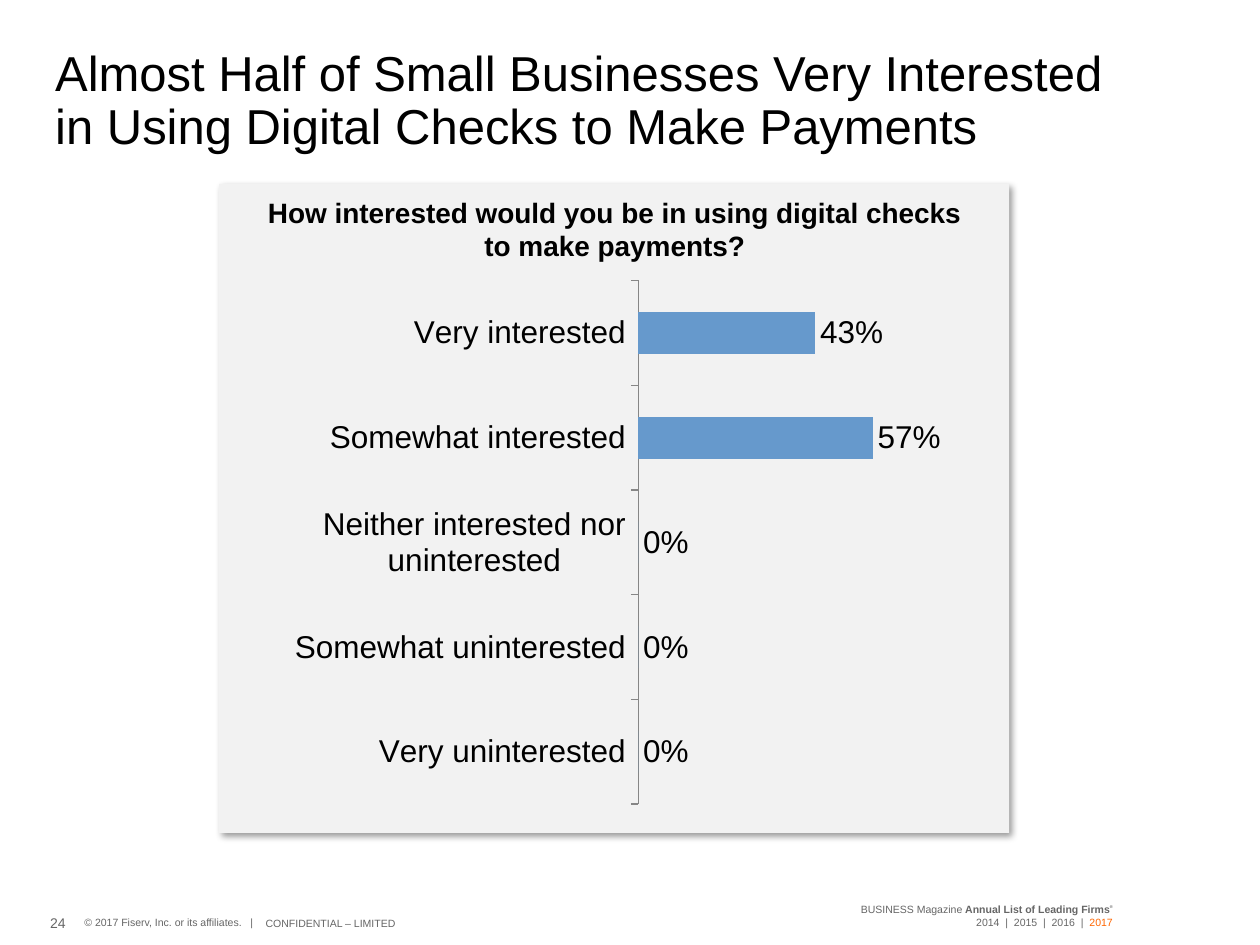
"""Build the slide on small business interest in digital checks."""
from lxml import etree
from pptx import Presentation
from pptx.chart.data import CategoryChartData
from pptx.dml.color import RGBColor
from pptx.enum.chart import XL_CHART_TYPE, XL_LABEL_POSITION, XL_TICK_MARK
from pptx.enum.shapes import MSO_SHAPE
from pptx.enum.text import MSO_ANCHOR, PP_ALIGN
from pptx.oxml import parse_xml
from pptx.oxml.ns import nsdecls, qn
from pptx.util import Inches, Pt

BAR = XL_CHART_TYPE.BAR_CLUSTERED
OUTSIDE_END = XL_LABEL_POSITION.OUTSIDE_END
TICK_OUT, TICK_NONE = XL_TICK_MARK.OUTSIDE, XL_TICK_MARK.NONE
RECTANGLE = MSO_SHAPE.RECTANGLE
TOP, MIDDLE, BOTTOM = MSO_ANCHOR.TOP, MSO_ANCHOR.MIDDLE, MSO_ANCHOR.BOTTOM
LEFT, CENTER, RIGHT = PP_ALIGN.LEFT, PP_ALIGN.CENTER, PP_ALIGN.RIGHT

BLACK = RGBColor(0x00, 0x00, 0x00)
GRAY = RGBColor(0x66, 0x66, 0x66)
AXIS_GRAY = RGBColor(0x86, 0x86, 0x86)
PANEL_GRAY = RGBColor(0xF2, 0xF2, 0xF2)
ORANGE = RGBColor(0xFF, 0x66, 0x00)
BLUE = RGBColor(0x66, 0x99, 0xCC)
FONT = "Arial"

deck = Presentation()
deck.slide_width, deck.slide_height = Inches(10), Inches(7.5)
COLUMN, ROW = deck.slide_width / 100, deck.slide_height / 100
page = deck.slides.add_slide(deck.slide_layouts[6])


def place(left, top, width, height):
    """Turn percentages of the slide into lengths."""
    return [int(n * unit) for n, unit in
            zip((left, top, width, height), (COLUMN, ROW, COLUMN, ROW))]


def add_text(spans, area, size=6, color=GRAY, bold=False, align=LEFT,
             anchor=TOP, spacing=1.0, insets=(0.1, 0.05)):
    """Add a text box; a span is a string or a (string, format) pair."""
    box = page.shapes.add_textbox(*place(*area))
    frame = box.text_frame
    frame.word_wrap = True
    frame.vertical_anchor = anchor
    frame.margin_left = frame.margin_right = Inches(insets[0])
    frame.margin_top = frame.margin_bottom = Inches(insets[1])
    para = frame.paragraphs[0]
    para.alignment, para.line_spacing = align, spacing
    for item in spans:
        if item == "\n":
            para.add_line_break()
            continue
        text, style = (item, {}) if isinstance(item, str) else item
        span = para.add_run()
        span.text = text
        span.font.name = FONT
        span.font.size = Pt(style.get("size", size))
        span.font.bold = style.get("bold", bold)
        span.font.color.rgb = style.get("color", color)
        if "baseline" in style:
            span.font._element.set("baseline", str(style["baseline"]))


add_text(["© 2017 Fiserv, Inc. or its affiliates.   |"], (6, 96.67, 16.7, 2.13),
         spacing=0.9, insets=(0.07, 0.03))
add_text(["CONFIDENTIAL – LIMITED"], (20.1, 96.4, 15.2, 2.67))
add_text(["BUSINESS Magazine ",
          ("Annual List of Leading Firms", {"bold": True}),
          ("®", {"bold": True, "size": 4, "baseline": 60000}),
          "\n", "2014  |  2015  |  2016  |  ", ("2017", {"color": ORANGE})],
         (64.9, 94.8, 24.4, 4.4), align=RIGHT, spacing=Pt(7.5))

panel = page.shapes.add_shape(RECTANGLE, *place(17.4, 19.47, 62.7, 68.67))
panel.shadow.inherit = False
panel.fill.solid()
panel.fill.fore_color.rgb = PANEL_GRAY
panel.line.fill.background()
effects = panel._element.spPr.find(qn("a:effectLst"))
effects.append(parse_xml(
    f'<a:outerShdw {nsdecls("a")} blurRad="{Pt(4)}" dist="{Pt(3)}" '
    'dir="2700000" algn="tl" rotWithShape="0"><a:srgbClr val="000000">'
    '<a:alpha val="40000"/></a:srgbClr></a:outerShdw>'))

add_text(["Almost Half of Small Businesses Very Interested", "\n",
          "in Using Digital Checks to Make Payments"],
         (3.4, 4.53, 95, 12.53), size=28, color=BLACK, anchor=BOTTOM, spacing=0.9)
add_text(["24"], (0, 95.6, 6.2, 4.13), size=8, align=RIGHT, anchor=MIDDLE)

answers = {
    "Very uninterested": 0,
    "Somewhat uninterested": 0,
    "Neither interested nor uninterested": 0,
    "Somewhat interested": 0.57,
    "Very interested": 0.43,
}
chart_data = CategoryChartData(number_format="0%")
chart_data.categories = list(answers)
chart_data.add_series("Series 1", list(answers.values()))
chart = page.shapes.add_chart(BAR, *place(22.3, 28.53, 55.6, 57.73), chart_data).chart
chart.has_legend = chart.has_title = False
chart.font.name, chart.font.size = FONT, Pt(18)
chart.font.color.rgb = BLACK

category_axis = chart.category_axis
category_axis.major_tick_mark, category_axis.minor_tick_mark = TICK_OUT, TICK_NONE
category_axis.format.line.color.rgb = AXIS_GRAY
category_axis.format.line.width = Pt(0.75)
value_axis = chart.value_axis
value_axis.minimum_scale, value_axis.maximum_scale = 0, 0.8
value_axis.major_unit = 0.2
value_axis.has_major_gridlines = False
value_axis.visible = False

plot = chart.plots[0]
plot.gap_width = 150
plot.vary_by_categories = False
bars = plot.series[0]
bars.format.fill.solid()
bars.format.fill.fore_color.rgb = BLUE
labels = bars.data_labels
labels.show_value = True
labels.number_format, labels.number_format_is_linked = "0%", False
labels.position = OUTSIDE_END

plot_area = chart._chartSpace.chart.plotArea
for old_layout in plot_area.findall(qn("c:layout")):
    plot_area.remove(old_layout)
layout = etree.Element(qn("c:layout"))
manual = etree.SubElement(layout, qn("c:manualLayout"))
for tag, value in (("layoutTarget", "inner"), ("xMode", "edge"), ("yMode", "edge"),
                   ("x", 0.51), ("y", 0.02), ("w", 0.47), ("h", 0.96)):
    etree.SubElement(manual, qn(f"c:{tag}")).set("val", str(value))
plot_area.insert(0, layout)

add_text(["How interested would you be in using digital checks to make payments?"],
         (19, 20, 59.6, 8.53), size=16, color=BLACK, bold=True, align=CENTER)

deck.save("out.pptx")
